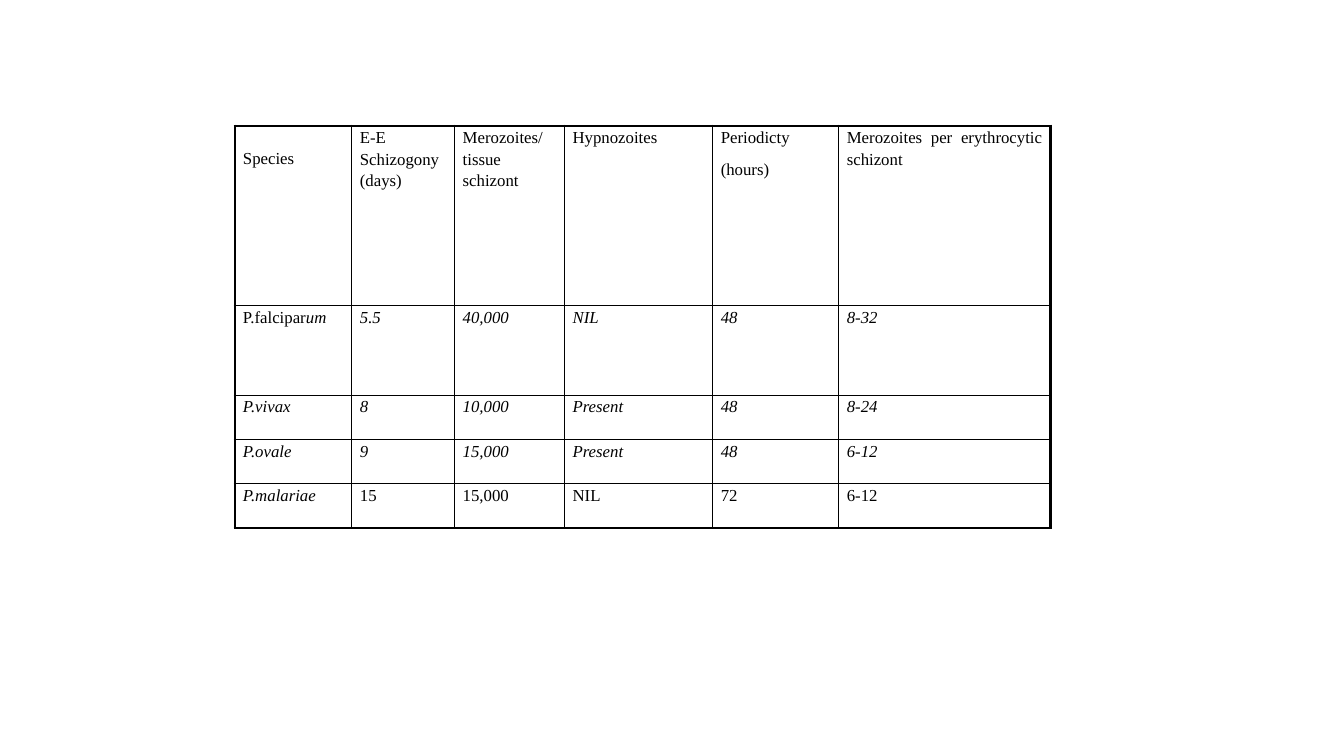
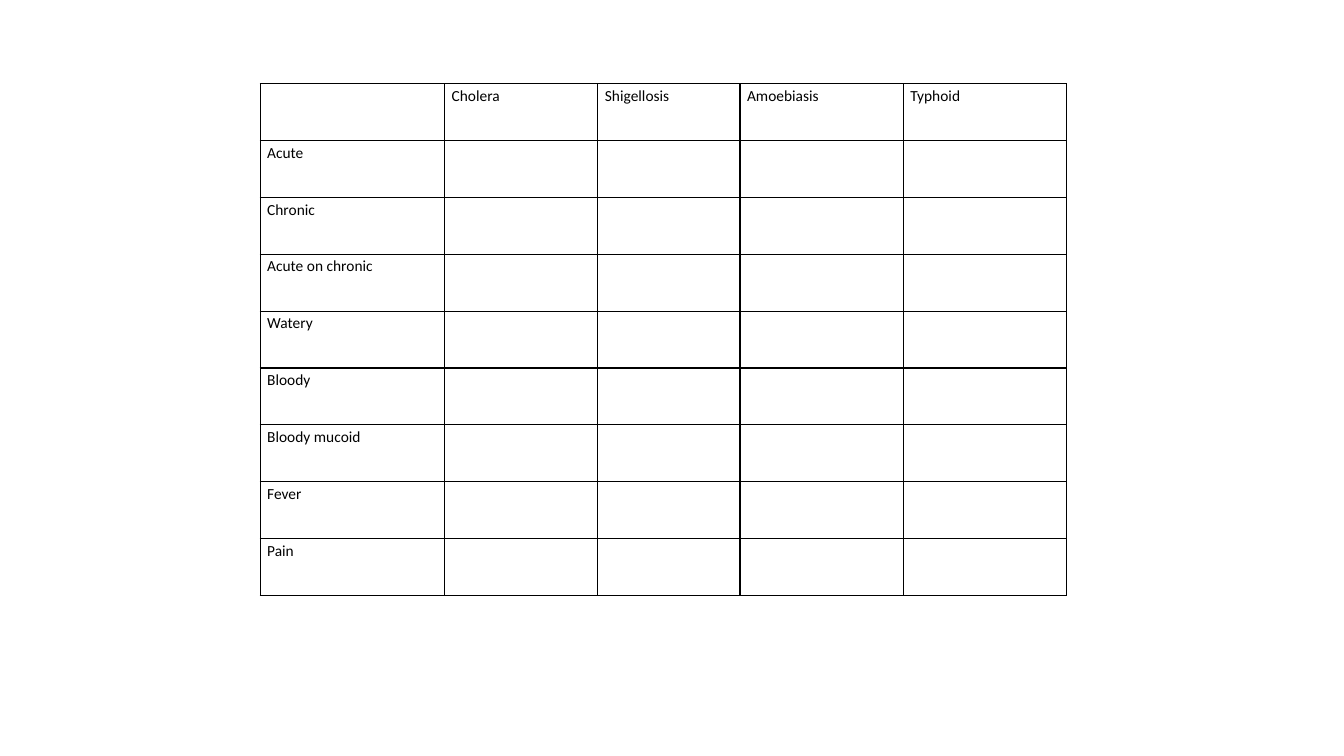
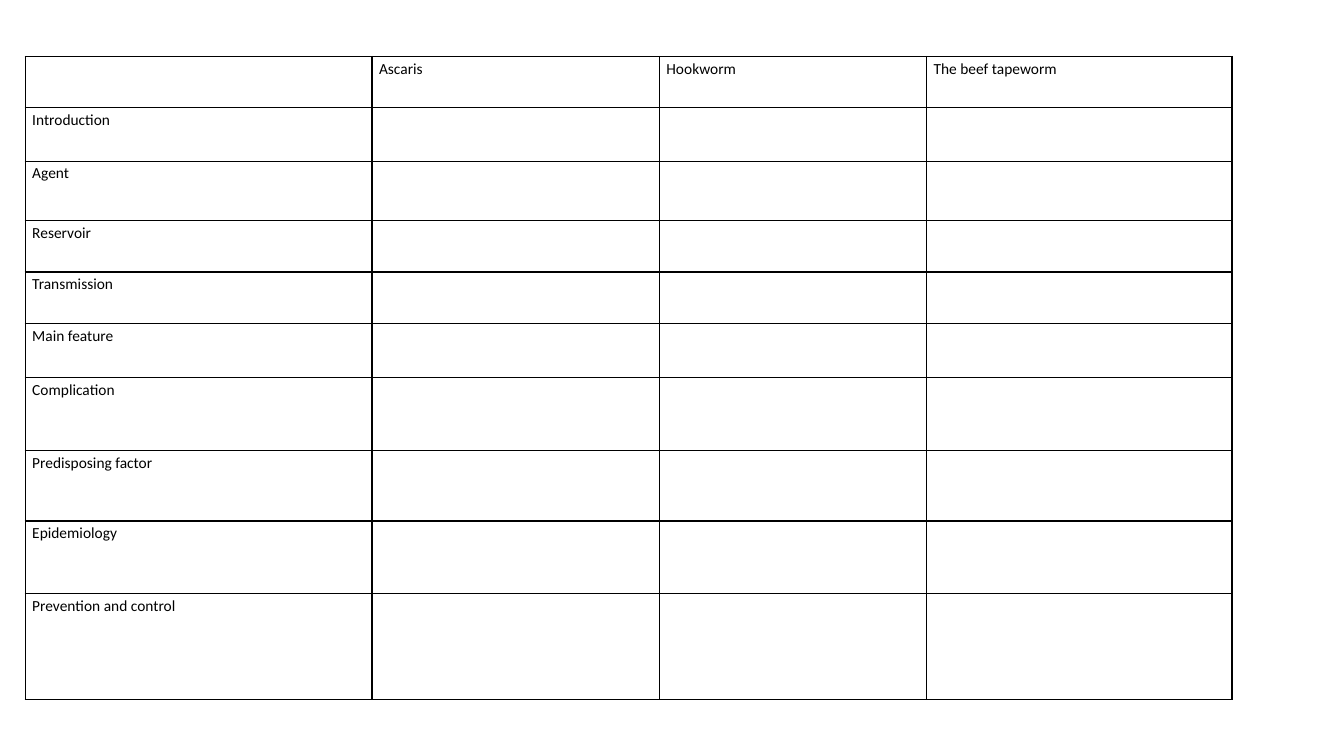
from dataclasses import dataclass, field
from lxml.etree import SubElement as Sub
from pptx import Presentation as Deck
from pptx.dml.color import RGBColor as Rgb
from pptx.enum.text import PP_ALIGN as Align
from pptx.oxml.ns import qn
from pptx.util import Inches, Pt

INK = "000000"
THIN = 1
THICK = 2.25
LEAD = 1.15


@dataclass
class Style:
    face: str
    size: float
    inset: float
    frame: float
    align: Align


@dataclass
class Grid:
    left: float
    top: float
    cols: list[float]
    tall: list[float]
    rows: list[list[str]]
    style: Style
    drops: dict[tuple[int, int], float] = field(default_factory=dict)
    gaps: dict[tuple[int, int], float] = field(default_factory=dict)


SERIF = Style("Times New Roman", 12, 0.08, THICK, Align.JUSTIFY)
PLAIN = Style("Calibri", 11, 0.07, THIN, Align.LEFT)


def paint(code: str) -> Rgb:
    return Rgb.from_string(code)


def assign(item, values: dict) -> None:
    for name, value in values.items():
        setattr(item, name, value)


def form(heads: list[str], sides: list[str]) -> list[list[str]]:
    return [["", *heads]] + [[side] + [""] * len(heads) for side in sides]


def edge(cell, side: str, width: float) -> None:
    line = Sub(cell._tc.get_or_add_tcPr(), qn(f"a:ln{side}"), w=str(Pt(width)))
    fill = Sub(line, qn("a:solidFill"))
    Sub(fill, qn("a:srgbClr"), val=INK)


def write(cell, text: str, style: Style, gap: float) -> None:
    for i, line in enumerate(text.split("\n")):
        frame = cell.text_frame
        para = frame.add_paragraph() if i else frame.paragraphs[0]
        assign(para, {"alignment": style.align, "line_spacing": LEAD})
        if i:
            para.space_before = Pt(gap)
        for j, part in enumerate(line.split("_")):
            if part:
                run = para.add_run()
                run.text = part
                assign(run.font, {"name": style.face, "size": Pt(style.size),
                                  "italic": j % 2 == 1})
                run.font.color.rgb = paint(INK)


def draw(deck, grid: Grid) -> None:
    slide = deck.slides.add_slide(deck.slide_layouts[6])
    high, wide = len(grid.tall), len(grid.cols)
    box = [Inches(v) for v in (grid.left, grid.top, sum(grid.cols), sum(grid.tall))]
    table = slide.shapes.add_table(high, wide, *box).table
    assign(table, {"first_row": False, "horz_banding": False})
    for col, width in zip(table.columns, grid.cols):
        col.width = Inches(width)
    for row, height in zip(table.rows, grid.tall):
        row.height = Inches(height)
    style = grid.style
    for r, texts in enumerate(grid.rows):
        for c, text in enumerate(texts):
            cell = table.cell(r, c)
            outer = {"L": c == 0, "R": c == wide - 1, "T": r == 0, "B": r == high - 1}
            for side, rim in outer.items():
                edge(cell, side, style.frame if rim else THIN)
            cell.fill.background()
            assign(cell, {"margin_left": Inches(style.inset),
                          "margin_right": Inches(style.inset),
                          "margin_top": Inches(grid.drops.get((r, c), 0)),
                          "margin_bottom": 0})
            write(cell, text, style, grid.gaps.get((r, c), 0))


GRIDS = [
    Grid(
        2.33, 1.25, [1.16, 1.02, 1.09, 1.47, 1.25, 2.1], [1.78, 0.89] + [0.44] * 3,
        [
            ["Species", "E-E Schizogony\n(days)", "Merozoites/\ntissue schizont",
             "Hypnozoites", "Periodicty\n(hours)",
             "Merozoites per erythrocytic schizont"],
            ["P.falcipar_um", "_5.5", "_40,000", "_NIL", "_48", "_8-32"],
            ["_P.vivax", "_8", "_10,000", "_Present", "_48", "_8-24"],
            ["_P.ovale", "_9", "_15,000", "_Present", "_48", "_6-12"],
            ["_P.malariae", "15", "15,000", "NIL", "72", "6-12"],
        ],
        SERIF, drops={(0, 0): 0.21}, gaps={(0, 4): 7.3},
    ),
    Grid(
        2.58, 0.83, [1.83, 1.52, 1.41, 1.62, 1.62], [5.08 / 9] * 9,
        form(["Cholera", "Shigellosis", "Amoebiasis", "Typhoid"],
             ["Acute", "Chronic", "Acute on chronic", "Watery", "Bloody",
              "Bloody mucoid", "Fever", "Pain"]),
        PLAIN,
    ),
    Grid(
        0.25, 0.56, [3.44, 2.85, 2.65, 3.03],
        [0.51, 0.53, 0.59, 0.51, 0.51, 0.54, 0.72, 0.7, 0.72, 1.05],
        form(["Ascaris", "Hookworm", "The beef tapeworm"],
             ["Introduction", "Agent", "Reservoir", "Transmission", "Main feature",
              "Complication", "Predisposing factor", "Epidemiology",
              "Prevention and control"]),
        PLAIN,
    ),
]


def main() -> None:
    deck = Deck()
    assign(deck, {"slide_width": Inches(13.33), "slide_height": Inches(7.5)})
    for grid in GRIDS:
        draw(deck, grid)
    deck.save("out.pptx")


if __name__ == "__main__":
    main()
